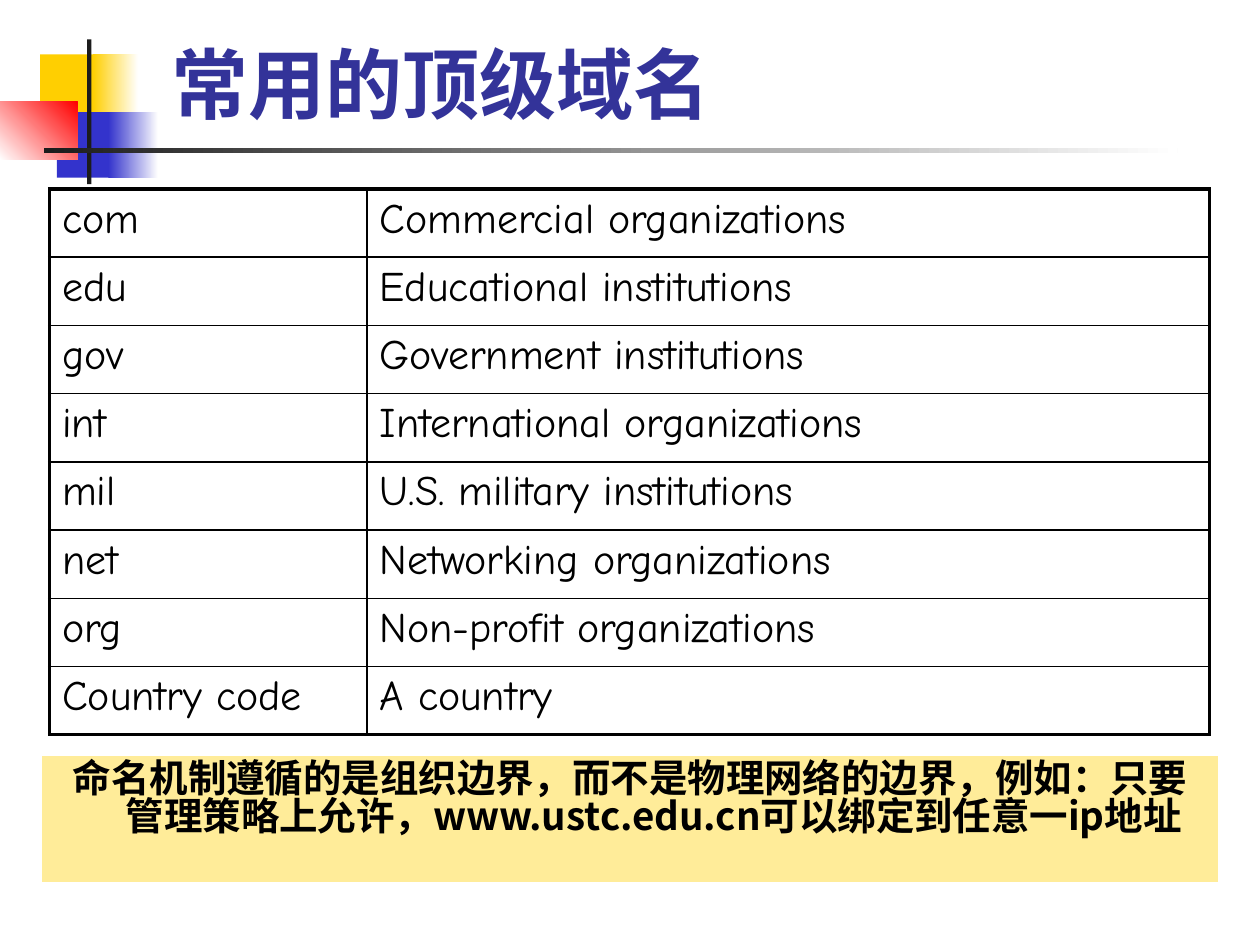
from dataclasses import dataclass

from lxml import etree
from pptx import Presentation
from pptx import util as u
from pptx.dml import color as c
from pptx.enum import shapes, text
from pptx.oxml import ns


@dataclass(frozen=True)
class Theme:
    """Colours, fonts and type sizes of the slide."""
    gold: str = "FFCF01"
    blue: str = "3333CC"
    red: str = "FF0000"
    white: str = "FFFFFF"
    dark: str = "1C1C1C"
    black: str = "000000"
    navy: str = "333399"
    cream: str = "FFEC99"
    hand: str = "Comic Neue"
    sans: str = "Noto Sans CJK SC"
    head: int = 44
    cell: int = 24
    note: int = 22


T = Theme()
ROWS = [
    ("com", "Commercial organizations"),
    ("edu", "Educational institutions"),
    ("gov", "Government institutions"),
    ("int", "International organizations"),
    ("mil", "U.S. military institutions"),
    ("net", "Networking organizations"),
    ("org", "Non-profit organizations"),
    ("Country code", "A country"),
]
NOTE = ["命名机制遵循的是组织边界，而不是物理网络的边界，例如：只要管理策略上允许，",
        "www.ustc.edu.cn", "可以绑定到任意一", "ip", "地址"]


def rgb(code):
    """Turn a hex code into a colour."""
    return c.RGBColor.from_string(code)


def node(parent, tag, **attrs):
    """Append a drawing element to a parent."""
    return etree.SubElement(parent, ns.qn(tag), attrs)


def add_run(para, words, font, size, tint, bold=False):
    """Add one styled run to a paragraph."""
    run = para.add_run()
    run.text = words
    run.font.name = font
    run.font.size = u.Pt(size)
    run.font.bold = bold
    run.font.color.rgb = rgb(tint)
    node(run.font._element, "a:ea", typeface=font)


def place(shape, left, top, width, height):
    """Move and size a shape in points."""
    shape.left, shape.top = u.Pt(left), u.Pt(top)
    shape.width, shape.height = u.Pt(width), u.Pt(height)


def add_block(slide, box, tint, end=None, angle=0):
    """Add a plain block, or a fading one when an end colour is given."""
    block = slide.shapes.add_shape(shapes.MSO_SHAPE.RECTANGLE, *map(u.Pt, box))
    block.shadow.inherit = False
    block.line.fill.background()
    if end is None:
        block.fill.solid()
        block.fill.fore_color.rgb = rgb(tint)
        return
    block.fill.gradient()
    block.fill.gradient_angle = angle
    for stop, shade in zip(block.fill.gradient_stops, (tint, end)):
        stop.color.rgb = rgb(shade)
    for stop, pos in zip(block.fill.gradient_stops, (0, 1)):
        stop.position = pos


def add_motif(slide):
    """Draw the corner blocks and the two rules."""
    add_block(slide, (23, 31, 34.5, 37.5), T.gold)
    add_block(slide, (53, 31, 26, 37.5), T.gold, T.white)
    add_block(slide, (32.5, 64, 33, 37.5), T.blue)
    add_block(slide, (62, 64, 28.5, 37.5), T.blue, T.white)
    add_block(slide, (0, 58.2, 44.2, 33.2), T.white, T.red, 45)
    add_block(slide, (49.75, 22.5, 2.5, 82.8), T.dark)
    add_block(slide, (25, 84.75, 648, 2.5), T.dark, T.white)


def fill_title(shape):
    """Set the heading."""
    place(shape, 90.75, 16.5, 613.5, 60.5)
    frame = shape.text_frame
    frame.auto_size = text.MSO_AUTO_SIZE.NONE
    frame.vertical_anchor = text.MSO_ANCHOR.BOTTOM
    para = frame.paragraphs[0]
    para.alignment = text.PP_ALIGN.LEFT
    add_run(para, "常用的顶级域名", T.sans, T.head, T.navy, True)


def fill_note(shape):
    """Set the highlighted remark with its hanging indent."""
    place(shape, 24, 432, 672, 72)
    shape.fill.solid()
    shape.fill.fore_color.rgb = rgb(T.cream)
    frame = shape.text_frame
    frame.auto_size = text.MSO_AUTO_SIZE.NONE
    para = frame.paragraphs[0]
    para.alignment = text.PP_ALIGN.CENTER
    para.line_spacing = 0.82
    para.space_before = u.Pt(0)
    props = para._p.get_or_add_pPr()
    props.set("marL", str(u.Pt(27)))
    props.set("indent", str(u.Pt(-27)))
    node(props, "a:buNone")
    for words in NOTE:
        add_run(para, words, T.sans, T.note, T.black, True)


def add_edge(cell, side, width):
    """Draw one border of a cell."""
    line = node(cell._tc.get_or_add_tcPr(), f"a:ln{side}", w=str(u.Pt(width)))
    node(node(line, "a:solidFill"), "a:srgbClr", val=T.black)


def add_grid(slide):
    """Add the domain table with a heavy outer frame."""
    widths, step = (181.5, 481.5), 39
    box = map(u.Pt, (28.25, 108, sum(widths), step * len(ROWS)))
    grid = slide.shapes.add_table(len(ROWS), len(widths), *box).table
    grid.first_row = grid.horz_banding = False
    for col, width in zip(grid.columns, widths):
        col.width = u.Pt(width)
    for r, row in enumerate(ROWS):
        grid.rows[r].height = u.Pt(step)
        for k, words in enumerate(row):
            cell = grid.cell(r, k)
            outer = {"L": k == 0, "R": k == len(widths) - 1,
                     "T": r == 0, "B": r == len(ROWS) - 1}
            for side, thick in outer.items():
                add_edge(cell, side, 2.25 if thick else 1)
            cell.fill.background()
            para = cell.text_frame.paragraphs[0]
            add_run(para, words, T.hand, T.cell, T.black)


def main():
    """Build and save the slide."""
    deck = Presentation()
    deck.slide_width, deck.slide_height = u.Pt(720), u.Pt(540)
    slide = deck.slides.add_slide(deck.slide_layouts[1])
    add_motif(slide)
    fill_title(slide.shapes.title)
    fill_note(slide.placeholders[1])
    add_grid(slide)
    deck.save("out.pptx")


if __name__ == "__main__":
    main()
